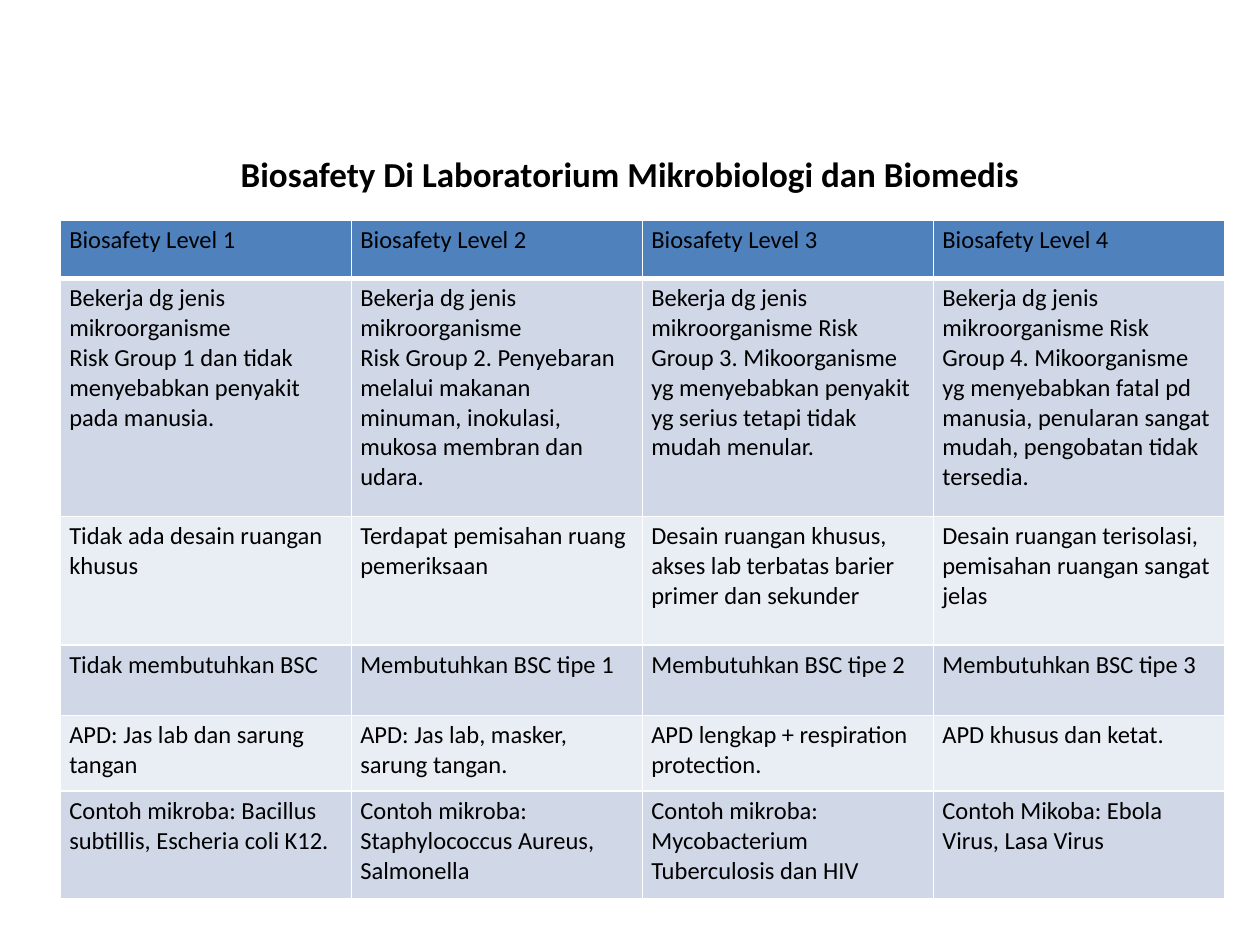
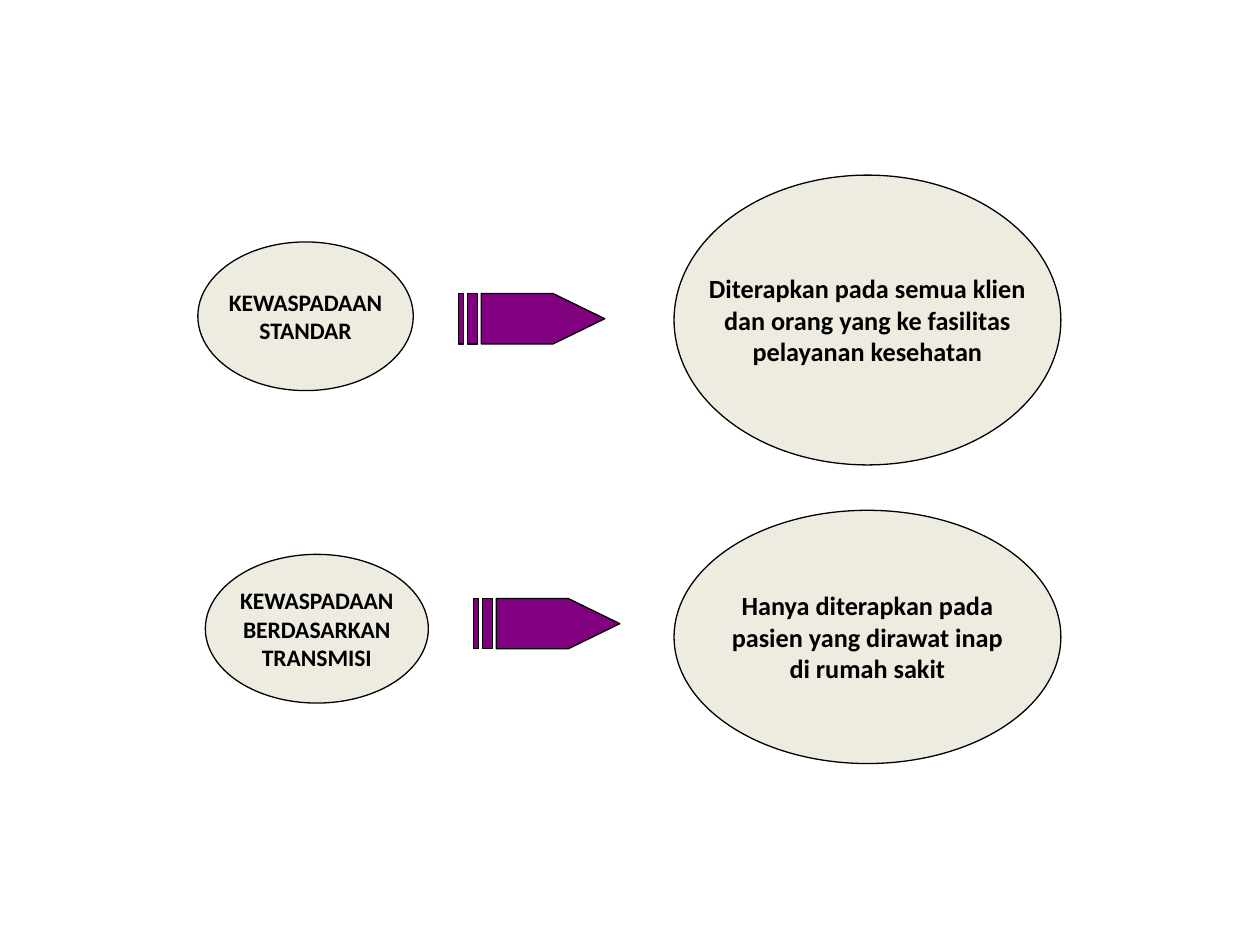
"""Builds two slides on biosafety levels and precautions."""
from lxml import etree
from pptx import Presentation
from pptx import util as u
from pptx.dml.color import RGBColor
from pptx.enum import shapes, text
from pptx.oxml import ns

BLACK, WHITE, PURPLE, CREAM = "000000", "FFFFFF", "800080", "EEECE1"
HEADER, BANDS = "4F81BD", ("D0D8E8", "E9EDF4")
COLUMNS, ROWS = 100, 75

LEVELS = [
    ["Biosafety Level 1", "Biosafety Level 2", "Biosafety Level 3", "Biosafety Level 4"],
    ["Bekerja dg jenis mikroorganisme\n"
     "Risk Group 1 dan tidak menyebabkan penyakit pada manusia.",
     "Bekerja dg jenis mikroorganisme\n"
     "Risk Group 2. Penyebaran melalui makanan minuman, inokulasi, mukosa membran dan udara.",
     "Bekerja dg jenis mikroorganisme Risk Group 3. Mikoorganisme yg menyebabkan penyakit "
     "yg serius tetapi tidak mudah menular.",
     "Bekerja dg jenis mikroorganisme Risk Group 4. Mikoorganisme yg menyebabkan fatal pd "
     "manusia, penularan sangat mudah, pengobatan tidak tersedia."],
    ["Tidak ada desain ruangan khusus",
     "Terdapat pemisahan ruang pemeriksaan",
     "Desain ruangan khusus, akses lab terbatas barier primer dan sekunder",
     "Desain ruangan terisolasi, pemisahan ruangan sangat jelas"],
    ["Tidak membutuhkan BSC", "Membutuhkan BSC tipe 1",
     "Membutuhkan BSC tipe 2", "Membutuhkan BSC tipe 3"],
    ["APD: Jas lab dan sarung tangan",
     "APD: Jas lab, masker,\nsarung tangan.",
     "APD lengkap + respiration protection.",
     "APD khusus dan ketat."],
    ["Contoh mikroba: Bacillus subtillis, Escheria coli K12.",
     "Contoh mikroba: Staphylococcus Aureus, Salmonella",
     "Contoh mikroba:\nMycobacterium Tuberculosis dan HIV",
     "Contoh Mikoba: Ebola Virus, Lasa Virus"],
]
ROW_HEIGHTS = [4.6, 18.9, 10.2, 5.6, 6, 8.5]

PRECAUTIONS = [
    (("KEWASPADAAN\nSTANDAR", 15.7, 19.2, 17.1, 11.8),
     (36.4, 23.3),
     ("Diterapkan pada semua klien\ndan orang yang ke fasilitas\npelayanan kesehatan",
      53.5, 13.9, 30.7, 23)),
    (("KEWASPADAAN\nBERDASARKAN\nTRANSMISI", 16.3, 44, 17.7, 11.8),
     (37.6, 47.5),
     ("Hanya diterapkan pada\npasien yang dirawat inap\ndi rumah sakit",
      53.5, 40.5, 30.7, 20.1)),
]


def rgb(value):
    return RGBColor.from_string(value)


class Deck:
    def __init__(self):
        self.prs = Presentation()
        self.prs.slide_width, self.prs.slide_height = u.Inches(10), u.Inches(7.5)
        self.font = "Calibri"
        self.s = None

    def x(self, columns):
        return round(self.prs.slide_width * columns / COLUMNS)

    def y(self, rows):
        return round(self.prs.slide_height * rows / ROWS)

    def box(self, left, top, width, height):
        return self.x(left), self.y(top), self.x(width), self.y(height)

    def slide(self, layout):
        self.s = self.prs.slides.add_slide(self.prs.slide_layouts.get_by_name(layout))

    def add_text(self, tf, content, size, bold=False, align=text.PP_ALIGN.CENTER):
        for i, line in enumerate(content.split("\n")):
            p = tf.add_paragraph() if i else tf.paragraphs[0]
            p.alignment = align
            r = p.add_run()
            r.text = line
            r.font.name, r.font.size, r.font.bold = self.font, u.Pt(size), bold
            r.font.color.rgb = rgb(BLACK)

    def paint(self, sp, fill):
        sp.shadow.inherit = False
        sp.fill.solid()
        sp.fill.fore_color.rgb = rgb(fill)
        sp.line.color.rgb = rgb(BLACK)
        sp.line.width = u.Pt(0.75)

    def title(self, content, *area):
        sp = self.s.shapes.title
        sp.left, sp.top, sp.width, sp.height = self.box(*area)
        sp.text_frame.vertical_anchor = text.MSO_ANCHOR.TOP
        self.add_text(sp.text_frame, content, 20, True)

    def ellipse(self, content, size, *area):
        sp = self.s.shapes.add_shape(shapes.MSO_SHAPE.OVAL, *self.box(*area))
        self.paint(sp, CREAM)
        tf = sp.text_frame
        tf.word_wrap = False
        tf.vertical_anchor = text.MSO_ANCHOR.MIDDLE
        self.add_text(tf, content, size, True)

    def striped_arrow(self, left, top, height=4):
        def points(*pairs):
            return [(self.x(left + dx), self.y(top + dy)) for dx, dy in pairs]

        body = points((1.8, 0), (7.5, 0), (11.6, height / 2), (7.5, height), (1.8, height))
        builder = self.s.shapes.build_freeform(*body[0])
        builder.add_line_segments(body[1:])
        for start, end in ((0.7, 1.5), (0, 0.4)):
            stripe = points((start, 0), (start, height), (end, height), (end, 0))
            builder.move_to(*stripe[0])
            builder.add_line_segments(stripe[1:])
        self.paint(builder.convert_to_shape(), PURPLE)

    def border(self, cell, bottom):
        props = cell._tc.get_or_add_tcPr()
        for i, (side, width) in enumerate(zip("LRTB", (1, 1, 1, bottom))):
            line = etree.Element(ns.qn(f"a:ln{side}"), w=str(u.Pt(width)))
            fill = etree.SubElement(line, ns.qn("a:solidFill"))
            etree.SubElement(fill, ns.qn("a:srgbClr"), val=WHITE)
            props.insert(i, line)

    def table(self, rows, heights, left, top, width):
        area = self.box(left, top, width, sum(heights))
        table = self.s.shapes.add_table(len(rows), len(rows[0]), *area).table
        for column in table.columns:
            column.width = self.x(width / len(rows[0]))
        for i, (row, height) in enumerate(zip(rows, heights)):
            table.rows[i].height = self.y(height)
            for j, content in enumerate(row):
                cell = table.cell(i, j)
                cell.margin_left = cell.margin_right = self.x(0.7)
                cell.margin_top = cell.margin_bottom = self.y(0.4)
                cell.fill.solid()
                cell.fill.fore_color.rgb = rgb(BANDS[(i - 1) % 2] if i else HEADER)
                self.border(cell, 1 if i else 3)
                self.add_text(cell.text_frame, content, 14, align=text.PP_ALIGN.LEFT)


def main():
    deck = Deck()
    deck.slide("Title Only")
    deck.title("Biosafety Di Laboratorium Mikrobiologi dan Biomedis", 5, 11.6, 90, 5.9)
    deck.table(LEVELS, ROW_HEIGHTS, 4.8, 17.5, 92.4)

    deck.slide("Blank")
    for (name, *name_area), arrow, (scope, *scope_area) in PRECAUTIONS:
        deck.ellipse(name, 13.5, *name_area)
        deck.striped_arrow(*arrow)
        deck.ellipse(scope, 15, *scope_area)
    deck.prs.save("out.pptx")


if __name__ == "__main__":
    main()
